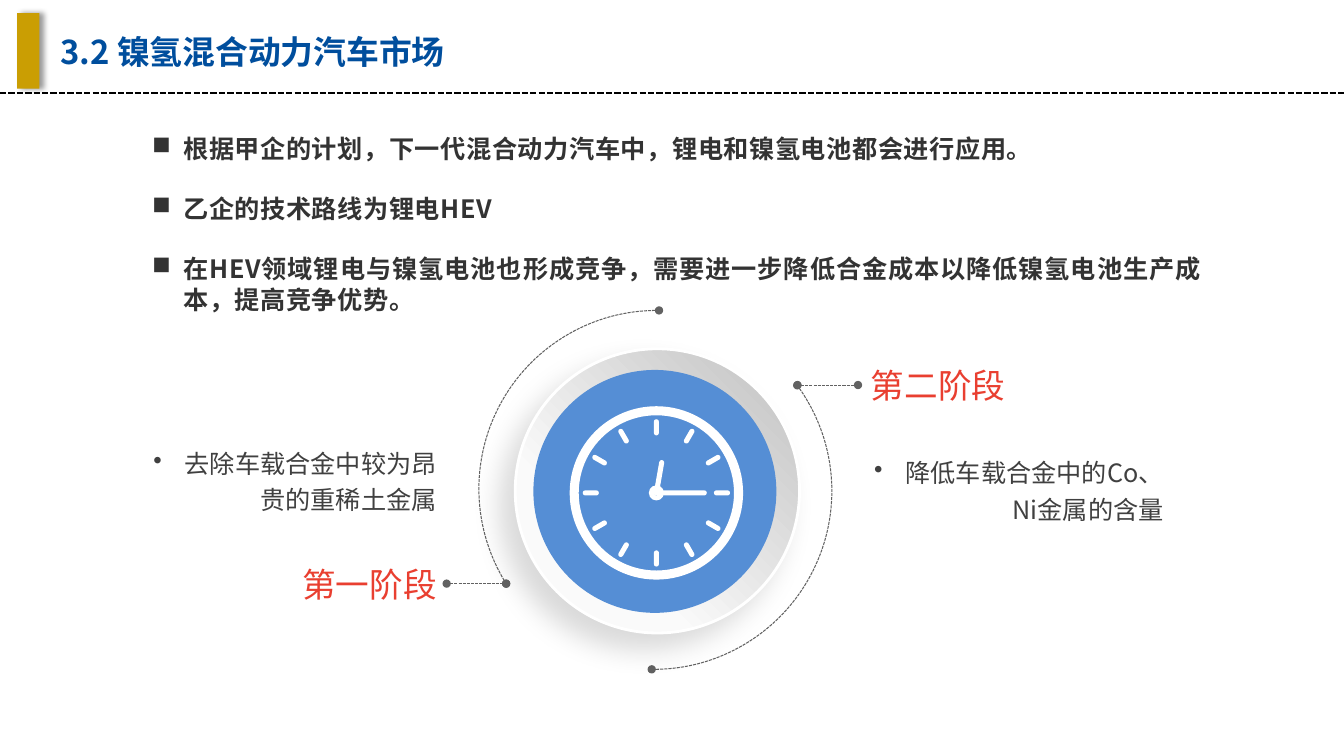
import math
from dataclasses import dataclass

from lxml import etree
from pptx import Presentation
from pptx import util as u
from pptx.dml.color import RGBColor
from pptx.enum import dml, shapes, text
from pptx.oxml.ns import qn


@dataclass(frozen=True)
class Theme:
    font: str = "Noto Sans CJK SC"
    title: str = "004E9D"
    accent: str = "CA9E03"
    point: str = "333333"
    stage: str = "E93F30"
    detail: str = "404040"
    leader: str = "626262"
    dial: str = "558ED5"
    rim_dark: str = "BFBFBF"
    rim_light: str = "FAFAFA"
    white: str = "FFFFFF"
    black: str = "000000"
    title_size: float = 23.4
    stage_size: float = 24
    body_size: float = 18


THEME = Theme()
CLOCK_X, CLOCK_Y = 6.51, 4.89
SHAPE = shapes.MSO_SHAPE
ALIGN = text.PP_ALIGN
MIDDLE = text.MSO_ANCHOR.MIDDLE


def rgb(colour):
    return RGBColor.from_string(colour)


def add_text(slide, box, paragraphs, *, size, colour, bold=False, align=ALIGN.LEFT,
             anchor=MIDDLE, bullet=None, line_spacing=None, gap=0, tracking=0):
    frame = slide.shapes.add_textbox(*map(u.Inches, box)).text_frame
    frame.word_wrap = True
    frame.vertical_anchor = anchor
    for index, wording in enumerate(paragraphs):
        paragraph = frame.add_paragraph() if index else frame.paragraphs[0]
        if bullet:
            props = paragraph._p.get_or_add_pPr()
            props.set("marL", str(u.Inches(0.31)))
            props.set("indent", str(u.Inches(-0.31)))
            etree.SubElement(props, qn("a:buChar"), char=bullet)
        paragraph.alignment = align
        if line_spacing:
            paragraph.line_spacing = line_spacing
        if index and gap:
            paragraph.space_before = u.Pt(gap)
        run = paragraph.add_run()
        run.text = wording
        run.font.size = u.Pt(size)
        run.font.bold = bold
        run.font.color.rgb = rgb(colour)
        run.font.name = THEME.font
        run_props = run._r.get_or_add_rPr()
        etree.SubElement(run_props, qn("a:ea"), typeface=THEME.font)
        if tracking:
            run_props.set("spc", str(round(tracking * 100)))


def add_preset(slide, preset, box, fill=None):
    shape = slide.shapes.add_shape(preset, *map(u.Inches, box))
    shape.shadow.inherit = False
    shape.line.fill.background()
    if fill:
        shape.fill.solid()
        shape.fill.fore_color.rgb = rgb(fill)
    else:
        shape.fill.background()
    return shape


def add_shadow(shape, opacity, blur, distance, angle):
    """Cast an outer shadow: opacity in percent, lengths in points, angle in degrees."""
    effects = shape._element.spPr.find(qn("a:effectLst"))
    shadow = etree.SubElement(
        effects, qn("a:outerShdw"), blurRad=str(u.Pt(blur)), dist=str(u.Pt(distance)),
        dir=str(angle * 60000), algn="ctr", rotWithShape="0")
    colour = etree.SubElement(shadow, qn("a:srgbClr"), val=THEME.black)
    etree.SubElement(colour, qn("a:alpha"), val=str(opacity * 1000))


def dash_line(item, colour, width, dots=False):
    """Dash the outline of a connector or arc, with round dots at its ends if asked."""
    item.line.color.rgb = rgb(colour)
    item.line.width = u.Pt(width)
    item.line.dash_style = dml.MSO_LINE.SQUARE_DOT
    if dots:
        outline = item._element.spPr.find(qn("a:ln"))
        for end in ("a:headEnd", "a:tailEnd"):
            etree.SubElement(outline, qn(end), type="oval")


def add_rule(slide, left, right, y, colour, width, dots=False):
    rule = slide.shapes.add_connector(
        shapes.MSO_CONNECTOR.STRAIGHT,
        u.Inches(left), u.Inches(y), u.Inches(right), u.Inches(y))
    etree.SubElement(rule._element.spPr, qn("a:effectLst"))
    dash_line(rule, colour, width, dots)


def add_arc(slide, left, top, start, rotation=0):
    arc = add_preset(slide, SHAPE.ARC, (left, top, 3.54, 3.54))
    arc.adjustments[0] = start
    arc.adjustments[1] = 162.32
    arc.rotation = rotation
    dash_line(arc, THEME.leader, 0.75, dots=True)


def add_rim(slide):
    rim = add_preset(slide, SHAPE.OVAL, (5.11, 3.46, 2.82, 2.82))
    rim.fill.gradient()
    rim.fill.gradient_angle = 225
    stops = ((0, THEME.rim_dark), (0.7, THEME.rim_light))
    for stop, (position, colour) in zip(rim.fill.gradient_stops, stops):
        stop.position = position
        stop.color.rgb = rgb(colour)
    rim.line.color.rgb = rgb(THEME.white)
    rim.line.width = u.Pt(2)
    add_shadow(rim, 15, 20, 15, 135)


def add_ring(slide, diameter, thickness):
    ring = add_preset(slide, SHAPE.DONUT,
                      (CLOCK_X - diameter / 2, CLOCK_Y - diameter / 2, diameter, diameter),
                      THEME.white)
    ring.adjustments[0] = thickness / diameter


def add_clock_bar(slide, degrees, inner, outer):
    """Draw a rounded bar along a clock direction, between two distances from the centre."""
    middle, length, width = (inner + outer) / 2, outer - inner, 0.05
    x = CLOCK_X + middle * math.sin(math.radians(degrees))
    y = CLOCK_Y - middle * math.cos(math.radians(degrees))
    bar = add_preset(slide, SHAPE.ROUNDED_RECTANGLE,
                     (x - width / 2, y - length / 2, width, length), THEME.white)
    bar.adjustments[0] = 0.5
    bar.rotation = degrees


def add_clock(slide):
    add_rim(slide)
    add_preset(slide, SHAPE.OVAL, (5.29, 3.67, 2.41, 2.41), THEME.dial)
    add_ring(slide, 1.72, 0.09)
    for hour in range(12):
        add_clock_bar(slide, hour * 30, 0.57, 0.73)
    add_ring(slide, 0.15, 0.05)
    add_clock_bar(slide, 10, -0.02, 0.33)
    add_clock_bar(slide, 90, -0.03, 0.5)


def add_stage(slide, name, name_box, detail, detail_box, align):
    add_text(slide, name_box, [name], size=THEME.stage_size, colour=THEME.stage, align=align)
    add_text(slide, detail_box, [detail], size=THEME.body_size, colour=THEME.detail,
             align=ALIGN.RIGHT, bullet="•", line_spacing=1.2)


def main():
    deck = Presentation()
    deck.slide_width, deck.slide_height = u.Inches(13.33), u.Inches(7.5)
    slide = deck.slides.add_slide(deck.slide_layouts[6])

    add_rule(slide, 0, 13.33, 0.92, THEME.black, 1.5)
    marker = add_preset(slide, SHAPE.RECTANGLE, (0.17, 0.13, 0.22, 0.75), THEME.accent)
    add_shadow(marker, 40, 4, 3, 0)
    add_text(slide, (0.5, 0.22, 5.43, 0.57), ["3.2 镍氢混合动力汽车市场"],
             size=THEME.title_size, colour=THEME.title, bold=True)
    add_text(slide, (1.41, 1.27, 10.61, 2.26), [
        "根据甲企的计划，下一代混合动力汽车中，锂电和镍氢电池都会进行应用。",
        "乙企的技术路线为锂电HEV",
        "在HEV领域锂电与镍氢电池也形成竞争，需要进一步降低合金成本以降低镍氢电池生产成本，提高竞争优势。",
    ], size=THEME.body_size, colour=THEME.point, bold=True, align=ALIGN.JUSTIFY,
        anchor=text.MSO_ANCHOR.TOP, bullet="■", gap=21.5, tracking=0.4)

    add_arc(slide, 4.75, 3.08, 88.73)
    add_arc(slide, 4.71, 3.1, 86.23, rotation=180)
    add_rule(slide, 7.91, 8.51, 3.82, THEME.leader, 0.75, dots=True)
    add_rule(slide, 4.43, 5.02, 5.79, THEME.leader, 0.75, dots=True)
    add_clock(slide)

    add_stage(slide, "第一阶段", (1.61, 5.54, 2.82, 0.5),
              "去除车载合金中较为昂贵的重稀土金属", (1.33, 4.35, 3.1, 0.8), ALIGN.RIGHT)
    add_stage(slide, "第二阶段", (8.54, 3.57, 2.82, 0.5),
              "降低车载合金中的Co、Ni金属的含量", (8.54, 4.44, 3.1, 0.8), ALIGN.LEFT)
    deck.save("out.pptx")


if __name__ == "__main__":
    main()
